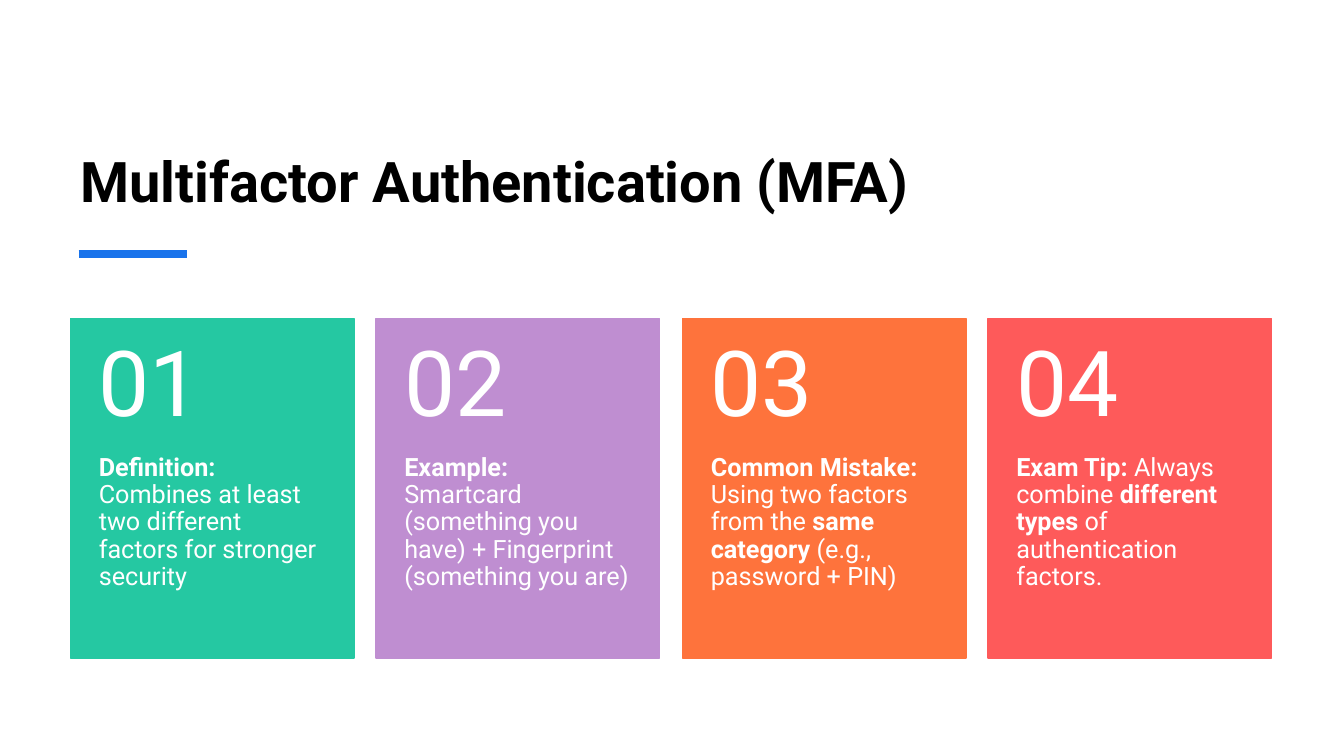
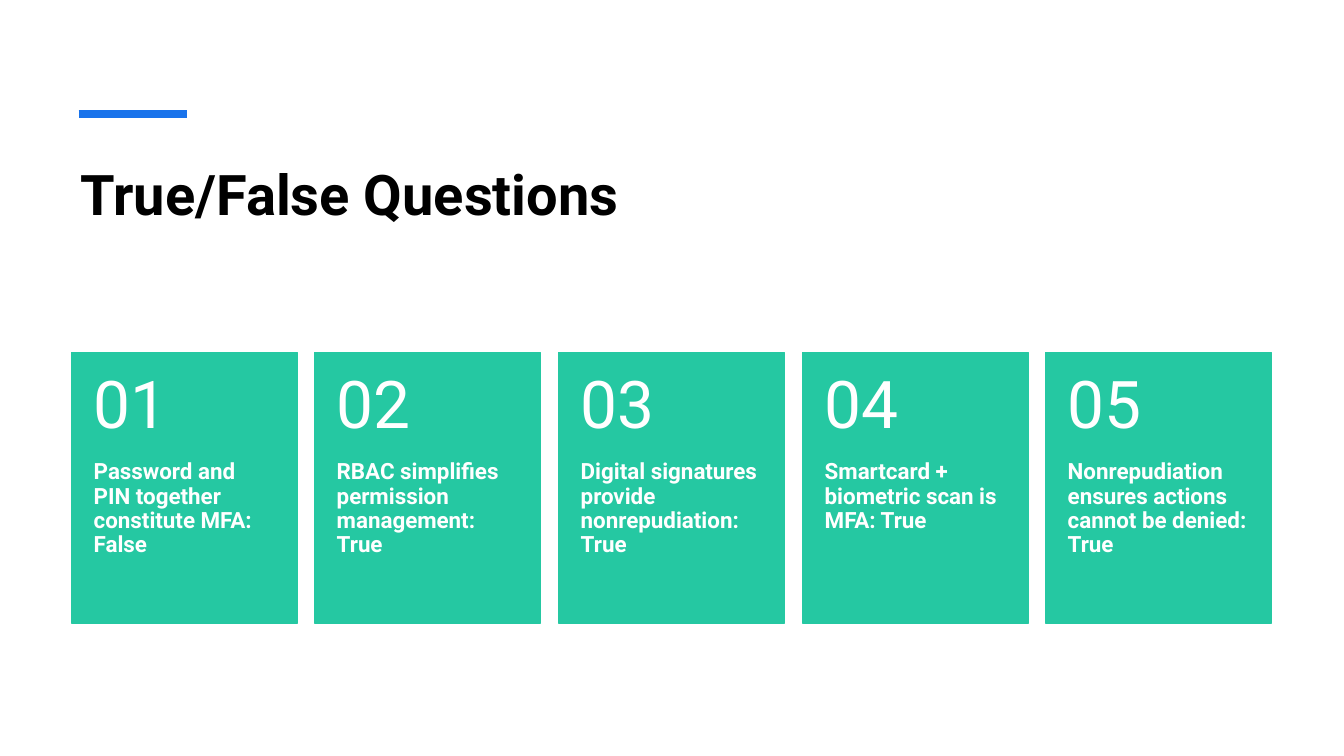
from dataclasses import dataclass

import pptx
import pptx.dml.color
import pptx.enum.shapes
import pptx.enum.text
import pptx.oxml
import pptx.oxml.ns
import pptx.util

RGBColor = pptx.dml.color.RGBColor
Anchor = pptx.enum.text.MSO_ANCHOR

PX = 9144
FONT = "Roboto"
BLACK = RGBColor(0x00, 0x00, 0x00)
WHITE = RGBColor(0xFF, 0xFF, 0xFF)
BLUE = RGBColor(0x19, 0x73, 0xEB)
GREEN = RGBColor(0x25, 0xC8, 0xA2)
PURPLE = RGBColor(0xBF, 0x8E, 0xD1)
ORANGE = RGBColor(0xFE, 0x73, 0x3C)
RED = RGBColor(0xFE, 0x5A, 0x5A)


@dataclass(frozen=True)
class Run:
    text: str
    bold: bool = False


@dataclass(frozen=True)
class Box:
    left: int
    top: int
    width: int
    height: int

    def emu(self) -> tuple[int, int, int, int]:
        return self.left * PX, self.top * PX, self.width * PX, self.height * PX


@dataclass(frozen=True)
class Style:
    size: int
    color: RGBColor = WHITE
    anchor: Anchor = Anchor.TOP
    inset: tuple[int, int, int, int] = (10, 5, 10, 5)
    spacing: float = 0.9


@dataclass(frozen=True)
class Card:
    fill: RGBColor
    runs: tuple[Run, ...]


@dataclass(frozen=True)
class Row:
    first: Box
    right: int
    head: int
    pad: int
    digit: int
    body: int
    cards: tuple[Card, ...]


@dataclass(frozen=True)
class Page:
    title: str
    box: Box
    anchor: Anchor
    rule: int
    row: Row


PAGES = (
    Page(
        "Multifactor Authentication (MFA)",
        Box(70, 65, 1191, 152), Anchor.BOTTOM, 252,
        Row(Box(70, 316, 281, 337), 1261, 135, 28, 65, 18, (
            Card(GREEN, (
                Run("Definition:", True),
                Run(" Combines at least two different factors for stronger security"),
            )),
            Card(PURPLE, (
                Run("Example:", True),
                Run(" Smartcard (something you have) + Fingerprint (something you are)"),
            )),
            Card(ORANGE, (
                Run("Common Mistake:", True),
                Run(" Using two factors from the "),
                Run("same category", True),
                Run(" (e.g., password + PIN)"),
            )),
            Card(RED, (
                Run("Exam Tip:", True),
                Run(" Always combine "),
                Run("different types", True),
                Run(" of authentication factors."),
            )),
        )),
    ),
    Page(
        "True/False Questions",
        Box(70, 153, 1191, 120), Anchor.TOP, 113,
        Row(Box(71, 350, 224, 268), 1261, 107, 22, 47, 16, tuple(
            Card(GREEN, (Run(text, True),)) for text in (
                "Password and PIN together constitute MFA: False",
                "RBAC simplifies permission management: True",
                "Digital signatures provide nonrepudiation: True",
                "Smartcard + biometric scan is MFA: True",
                "Nonrepudiation ensures actions cannot be denied: True",
            )
        )),
    ),
)


def add_text(shapes, box: Box, runs: tuple[Run, ...], style: Style) -> None:
    frame = shapes.add_textbox(*box.emu()).text_frame
    frame.word_wrap = True
    frame.vertical_anchor = style.anchor
    left, top, right, bottom = (side * PX for side in style.inset)
    frame.margin_left, frame.margin_top = left, top
    frame.margin_right, frame.margin_bottom = right, bottom
    para = frame.paragraphs[0]
    para.line_spacing = style.spacing
    for item in runs:
        run = para.add_run()
        run.text = item.text
        run.font.name = FONT
        run.font.size = pptx.util.Pt(style.size)
        run.font.bold = item.bold
        run.font.color.rgb = style.color


def add_rule(shapes, top: int) -> None:
    rule = shapes.add_connector(
        pptx.enum.shapes.MSO_CONNECTOR.STRAIGHT, 78 * PX, top * PX, 185 * PX, top * PX
    )
    rule.line.color.rgb = BLUE
    rule.line.width = pptx.util.Pt(6)
    props = rule.element.find(pptx.oxml.ns.qn("p:spPr"))
    props.append(pptx.oxml.parse_xml(f"<a:effectLst {pptx.oxml.ns.nsdecls('a')}/>"))


def add_card(shapes, row: Row, box: Box, count: int, card: Card) -> None:
    group = shapes.add_group_shape().shapes
    panel = group.add_shape(pptx.enum.shapes.MSO_SHAPE.RECTANGLE, *box.emu())
    panel.shadow.inherit = False
    panel.fill.solid()
    panel.fill.fore_color.rgb = card.fill
    panel.line.color.rgb = card.fill
    panel.line.width = pptx.util.Pt(1)
    lower = Box(box.left, box.top + row.head, box.width, box.height - row.head)
    add_text(group, lower, card.runs, Style(row.body, inset=(row.pad, 0, row.pad, 36)))
    upper = Box(box.left, box.top, box.width, row.head)
    style = Style(row.digit, anchor=Anchor.MIDDLE, inset=(row.pad, 18, row.pad, 18))
    add_text(group, upper, (Run(f"{count:02}"),), style)


def add_row(shapes, row: Row) -> None:
    first = row.first
    step = (row.right - first.left - first.width) / (len(row.cards) - 1)
    for index, card in enumerate(row.cards):
        left = round(first.left + index * step)
        box = Box(left, first.top, first.width, first.height)
        add_card(shapes, row, box, index + 1, card)


def add_page(deck, page: Page) -> None:
    shapes = deck.slides.add_slide(deck.slide_layouts[6]).shapes
    style = Style(40, BLACK, page.anchor, spacing=1.0)
    add_text(shapes, page.box, (Run(page.title, True),), style)
    add_rule(shapes, page.rule)
    add_row(shapes, page.row)


def main() -> None:
    deck = pptx.Presentation()
    deck.slide_width = 1333 * PX
    deck.slide_height = 750 * PX
    for page in PAGES:
        add_page(deck, page)
    deck.save("out.pptx")


if __name__ == "__main__":
    main()
